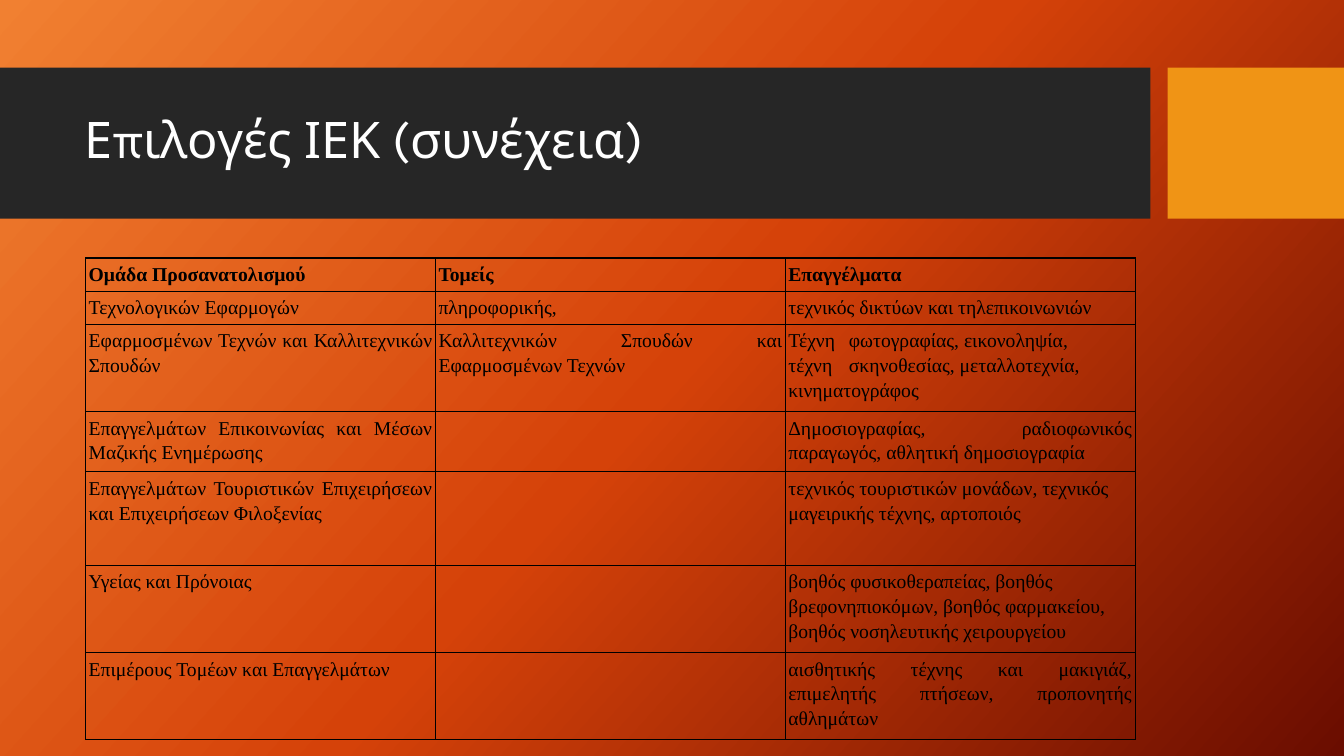
from copy import deepcopy
from dataclasses import dataclass

from lxml import etree
from pptx import Presentation
from pptx.dml.color import RGBColor
from pptx.enum import shapes, text
from pptx.oxml.ns import qn
from pptx.util import Inches, Pt

HUES = {
    "amber": "F18031", "rust": "D54209", "maroon": "6A0D00",
    "band": "262626", "block": "F09415", "white": "FFFFFF", "black": "000000",
}
LEFT, JUST = text.PP_ALIGN.LEFT, text.PP_ALIGN.JUSTIFY


@dataclass
class Bar:
    left: float
    width: float
    hue: str


@dataclass
class Row:
    group: str
    field: str
    jobs: str
    height: float
    align: text.PP_ALIGN = LEFT
    bold: bool = False


BARS = [Bar(0, 11.41, "band"), Bar(11.58, 1.75, "block")]
ROWS = [
    Row("Ομάδα Προσανατολισμού", "Τομείς", "Επαγγέλματα", 0.3, JUST, True),
    Row("Τεχνολογικών Εφαρμογών", "πληροφορικής, ",
        "τεχνικός δικτύων και τηλεπικοινωνιών", 0.3),
    Row("Εφαρμοσμένων Τεχνών και Καλλιτεχνικών Σπουδών",
        "Καλλιτεχνικών Σπουδών και Εφαρμοσμένων Τεχνών",
        "Τέχνη\tφωτογραφίας, εικονοληψία, \v"
        "τέχνη\tσκηνοθεσίας, μεταλλοτεχνία, κινηματογράφος", 0.79),
    Row("Επαγγελμάτων Επικοινωνίας και Μέσων Μαζικής Ενημέρωσης", "",
        "Δημοσιογραφίας, ραδιοφωνικός παραγωγός, αθλητική δημοσιογραφία",
        0.54, JUST),
    Row("Επαγγελμάτων Τουριστικών Επιχειρήσεων και Επιχειρήσεων Φιλοξενίας", "",
        "τεχνικός τουριστικών μονάδων, τεχνικός μαγειρικής τέχνης, αρτοποιός",
        0.93),
    Row("Υγείας και Πρόνοιας", "",
        "βοηθός φυσικοθεραπείας, βοηθός βρεφονηπιοκόμων, βοηθός φαρμακείου, "
        "βοηθός νοσηλευτικής χειρουργείου", 0.8),
    Row("Επιμέρους Τομέων και Επαγγελμάτων", "",
        "αισθητικής τέχνης και μακιγιάζ, επιμελητής πτήσεων, "
        "προπονητής αθλημάτων", 0.79, JUST),
]


def color(hue: str) -> RGBColor:
    return RGBColor.from_string(HUES[hue])


def write(frame, words: str, *, size: float, face: str, hue: str, align=LEFT,
          bold: bool = False, lead: float = 1, after: float = 0,
          tab: float = 0) -> None:
    """Fill a text frame with one paragraph; a vertical tab breaks the line."""
    para = frame.paragraphs[0]
    para.text = words
    para.alignment, para.line_spacing, para.space_after = align, lead, Pt(after)
    if tab:
        stops = etree.SubElement(para._p.get_or_add_pPr(), qn("a:tabLst"))
        etree.SubElement(stops, qn("a:tab"), pos=str(Inches(tab)), algn="l")
    for run in para.runs:
        font = run.font
        font.size, font.name, font.bold = Pt(size), face, bold
        font.color.rgb = color(hue)
    for gap in para._p.findall(qn("a:br")):
        gap.append(deepcopy(para.runs[0]._r.rPr))


def paint(slide) -> None:
    """Lay a three-stop diagonal gradient behind the slide."""
    fill = slide.background.fill
    fill.gradient()
    fill.gradient_angle = 318
    first = fill.gradient_stops[0]._gs
    first.addnext(deepcopy(first))
    for stop, hue, place in zip(fill.gradient_stops,
                                ("amber", "rust", "maroon"), (0, 0.5, 1)):
        stop.color.rgb = color(hue)
        stop.position = place


def block(slide, bar: Bar) -> None:
    shape = slide.shapes.add_shape(
        shapes.MSO_SHAPE.RECTANGLE, Inches(bar.left), Inches(0.67),
        Inches(bar.width), Inches(1.5))
    shape.shadow.inherit = False
    shape.fill.solid()
    shape.fill.fore_color.rgb = color(bar.hue)
    shape.line.fill.background()


def title(slide, words: str) -> None:
    frame = slide.shapes.add_textbox(
        Inches(0.74), Inches(0.82), Inches(10.51), Inches(1.18)).text_frame
    frame.word_wrap = True
    frame.vertical_anchor = text.MSO_ANCHOR.MIDDLE
    write(frame, words, size=36, face="Karla", hue="white", lead=0.9)


def edge(cell) -> None:
    """Draw a thin black border on all four sides of a cell."""
    props = cell._tc.get_or_add_tcPr()
    for spot, side in enumerate(("lnL", "lnR", "lnT", "lnB")):
        line = etree.Element(qn(f"a:{side}"), w=str(Pt(1)))
        fill = etree.SubElement(line, qn("a:solidFill"))
        etree.SubElement(fill, qn("a:srgbClr"), val=HUES["black"])
        props.insert(spot, line)


def grid(slide, rows: list[Row]) -> None:
    table = slide.shapes.add_table(
        len(rows), 3, Inches(0.85), Inches(2.56), Inches(10.41),
        Inches(sum(row.height for row in rows))).table
    table.first_row = table.horz_banding = False
    for col in table.columns:
        col.width = Inches(3.47)
    for line, row in enumerate(rows):
        table.rows[line].height = Inches(row.height)
        cells = zip(table.rows[line].cells, (row.group, row.field, row.jobs),
                    (JUST, JUST, row.align))
        for cell, words, align in cells:
            cell.margin_left = cell.margin_right = Inches(0.03)
            cell.margin_top = cell.margin_bottom = Inches(0.03)
            cell.fill.background()
            edge(cell)
            if words:
                write(cell.text_frame, words, size=14, face="Times New Roman",
                      hue="black", align=align, bold=row.bold, lead=1.15,
                      after=10, tab=0.6 if "\t" in words else 0)


def main() -> None:
    deck = Presentation()
    deck.slide_width, deck.slide_height = Inches(13.33), Inches(7.5)
    slide = deck.slides.add_slide(deck.slide_layouts[6])
    paint(slide)
    for bar in BARS:
        block(slide, bar)
    title(slide, "Επιλογές ΙΕΚ (συνέχεια)")
    grid(slide, ROWS)
    deck.save("out.pptx")


if __name__ == "__main__":
    main()
